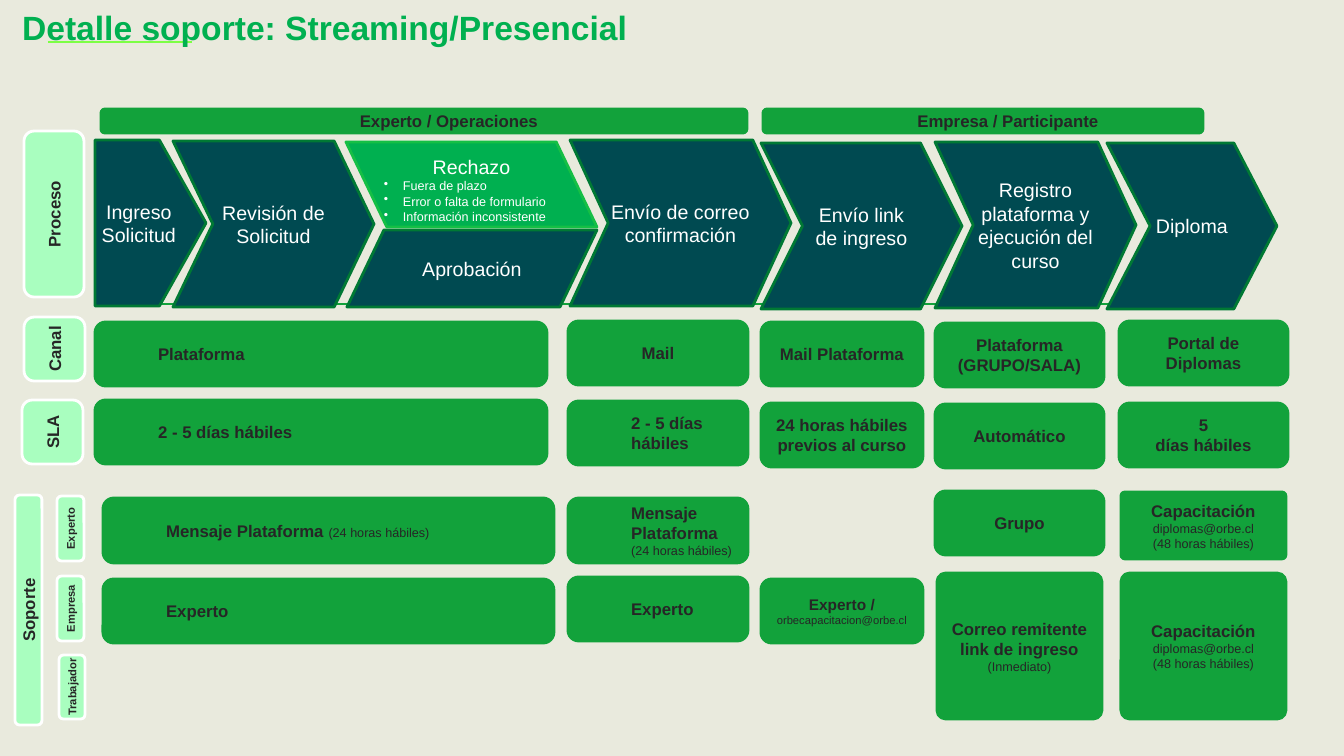
import pptx
import pptx.util
import pptx.dml.color
import pptx.enum.shapes
import pptx.enum.text
import pptx.oxml.ns
from lxml import etree
from dataclasses import dataclass, field

Shape = pptx.enum.shapes.MSO_SHAPE
Align = pptx.enum.text.PP_ALIGN
Anchor = pptx.enum.text.MSO_ANCHOR
qn = pptx.oxml.ns.qn

# ---- Theme: colours, and text styles as (size, bold, colour)
INK, WHITE = "262626", "FFFFFF"


@dataclass
class Theme:
    font: str = "Arial"
    background: str = "E9EADD"
    underline: str = "7CFF44"
    cell: tuple = ("12A23B", "12A23B")
    label: tuple = ("A9FEBF", WHITE)
    step: tuple = ("004A51", "007934")
    reject: tuple = ("00B050", "15BF45")
    text: dict = field(default_factory=lambda: {
        "title": (24, True, "00B050"), "step": (14, False, WHITE),
        "reason": (9, False, WHITE), "strong": (12, True, INK),
        "medium": (11, True, INK), "small": (8, True, INK),
        "note": (9, False, INK), "mail": (8, False, INK)})


theme = Theme()

# ---- Content: lengths in px; a paragraph is a list of (text, style) runs
TITLE = "Detalle soporte: Streaming/Presencial"
INDENT = 50
ROOMY, TIGHT, NARROW, BARE = (10, 5), (0, 5), (4, 5), (0, 0)

# column: left, width
COLUMNS = {
    "solicitud": (95, 452), "soporte": (103, 451), "correo": (568, 180),
    "link": (761, 162), "registro": (935, 169), "diploma": (1119, 169),
    "operaciones": (101, 646), "participante": (763, 440)}


def strong(*lines):
    return [[(line, "strong")] for line in lines]


HOURS = "(24 horas hábiles)"
CHAT = [[("Mensaje Plataforma ", "strong"), (HOURS, "note")]]
TRAINING = strong("Capacitación") + [
    [("diplomas@orbe.cl", "note")], [("(48 horas hábiles)", "note")]]
REMITTER = strong("Correo remitente link de ingreso") + [[("(Inmediato)", "note")]]
EXPERT_MAIL = [[("Experto / ", "medium"), ("orbecapacitacion@orbe.cl", "mail")]]

# column, top, height, paragraphs, alignment, indent
CELLS = [
    ("operaciones", 109, 24, strong("Experto / Operaciones"), "center", INDENT),
    ("participante", 109, 24, strong("Empresa / Participante"), "center", INDENT),
    ("solicitud", 322, 64, strong("Plataforma"), "left", INDENT),
    ("correo", 321, 64, strong("Mail"), "center", 0),
    ("link", 322, 64, strong("Mail Plataforma"), "center", 0),
    ("registro", 323, 64, strong("Plataforma", "(GRUPO/SALA)"), "center", 0),
    ("diploma", 321, 64, strong("Portal de Diplomas"), "center", 0),
    ("solicitud", 400, 64, strong("2 - 5 días hábiles"), "left", INDENT),
    ("correo", 401, 64, strong("2 - 5 días hábiles"), "left", INDENT),
    ("link", 403, 64, strong("24 horas hábiles previos al curso"), "center", 0),
    ("registro", 404, 64, strong("Automático"), "center", 0),
    ("diploma", 403, 64, strong("5", "días hábiles"), "center", 0),
    ("soporte", 498, 65, CHAT, "left", INDENT),
    ("correo", 498, 65, CHAT, "left", INDENT),
    ("registro", 491, 64, strong("Grupo"), "center", 0),
    ("soporte", 579, 64, strong("Experto"), "left", INDENT),
    ("correo", 577, 64, strong("Experto"), "left", INDENT),
    ("link", 579, 64, EXPERT_MAIL, "center", 0)]

# column, top, height, paragraphs: slightly narrower, with small corners
PANELS = [("registro", 573, 146, REMITTER),
          ("diploma", 492, 67, TRAINING),
          ("diploma", 573, 146, TRAINING)]

# text, style, left, top, width, height as seen, insets
LABELS = [
    ("Proceso", "strong", 24, 131, 60, 166, ROOMY),
    ("Canal", "strong", 24, 317, 61, 64, NARROW),
    ("SLA", "strong", 22, 400, 61, 64, NARROW),
    ("Soporte", "strong", 15, 495, 27, 230, ROOMY),
    ("Experto", "small", 57, 496, 27, 65, BARE),
    ("Empresa", "small", 57, 576, 27, 65, BARE),
    ("Trabajador", "small", 59, 655, 26, 64, BARE)]

# lines, shape, left, top, width, height, adjustment
STEPS = [
    (["Ingreso Solicitud"], Shape.PENTAGON, 95, 140, 111, 166, 0.42),
    (["Revisión de Solicitud"], Shape.CHEVRON, 173, 141, 201, 166, 0.24),
    (["Envío de correo confirmación"], Shape.CHEVRON, 570, 140, 221, 166, 0.23),
    (["Envío link", "de ingreso"], Shape.CHEVRON, 761, 143, 201, 166, 0.25),
    (["Registro plataforma y ejecución del curso"], Shape.CHEVRON, 935, 142, 201, 166, 0.23),
    (["Aprobación"], Shape.PARALLELOGRAM, 347, 230, 250, 77, 0.48),
    (["Diploma"], Shape.CHEVRON, 1107, 143, 170, 166, 0.26)]

REJECTION = (346, 142, 251, 85)
REASONS = ["Fuera de plazo", "Error o falta de formulario", "Información inconsistente"]


# ---- Helpers
def px(length):
    return round(length * 914400 / 100.8)


def rgb(code):
    return pptx.dml.color.RGBColor.from_string(code)


def add_span(para, text, style):
    span = para.add_run()
    span.text = text
    size, bold, colour = theme.text[style]
    span.font.name, span.font.size = theme.font, pptx.util.Pt(size)
    span.font.bold, span.font.color.rgb = bold, rgb(colour)


def add_box(page, kind, place, colours, paragraphs, insets=ROOMY,
            align="center", indent=0, adjust=None):
    box = page.shapes.add_shape(kind, *map(px, place))
    box.shadow.inherit = False
    box.fill.solid()
    box.fill.fore_color.rgb = rgb(colours[0])
    box.line.color.rgb = rgb(colours[1])
    box.line.width = pptx.util.Pt(2)
    if adjust is not None:
        box.adjustments[0] = adjust
    frame = box.text_frame
    frame.word_wrap, frame.vertical_anchor = True, Anchor.MIDDLE
    frame.margin_left = frame.margin_right = px(insets[0])
    frame.margin_top = frame.margin_bottom = px(insets[1])
    for number, spans in enumerate(paragraphs):
        para = frame.add_paragraph() if number else frame.paragraphs[0]
        para.alignment = Align.CENTER if align == "center" else Align.LEFT
        if indent:
            para.level = 1
            set_indent(para, indent, 0)
        for text, style in spans:
            add_span(para, text, style)
    return box


def set_indent(para, left, first):
    layout = para._p.get_or_add_pPr()
    layout.set("marL", str(px(left)))
    layout.set("indent", str(px(first)))
    return layout


def add_rule(page, left, right, top, colour, width):
    rule = page.shapes.add_connector(pptx.enum.shapes.MSO_CONNECTOR.STRAIGHT,
                                     px(left), px(top), px(right), px(top))
    rule.line.color.rgb, rule.line.width = rgb(colour), pptx.util.Pt(width)
    etree.SubElement(rule.element.spPr, qn("a:effectLst"))


def main():
    deck = pptx.Presentation()
    deck.slide_width, deck.slide_height = px(1344), px(756)
    page = deck.slides.add_slide(deck.slide_layouts[5])
    page.background.fill.solid()
    page.background.fill.fore_color.rgb = rgb(theme.background)

    # Title, in front of its underline
    add_rule(page, 48, 192, 42, theme.underline, 1.75)
    title = page.shapes.title
    title.left, title.top, title.width, title.height = map(px, (12, 10, 1159, 54))
    title.text_frame.vertical_anchor = Anchor.TOP
    title.text_frame.auto_size = pptx.enum.text.MSO_AUTO_SIZE.NONE
    heading = title.text_frame.paragraphs[0]
    heading.alignment, heading.line_spacing = Align.LEFT, 0.8
    add_span(heading, TITLE, "title")
    title.element.getparent().append(title.element)

    # Support grid
    for column, top, height, paragraphs, align, indent in CELLS:
        left, width = COLUMNS[column]
        add_box(page, Shape.ROUNDED_RECTANGLE, (left, top, width, height), theme.cell,
                paragraphs, align=align, indent=indent)
    for column, top, height, paragraphs in PANELS:
        left, width = COLUMNS[column]
        add_box(page, Shape.ROUNDED_RECTANGLE, (left + 2, top, width - 4, height),
                theme.cell, paragraphs, TIGHT, adjust=0.06)

    # Row labels, turned about their centres
    for text, style, left, top, width, height, insets in LABELS:
        shift = (height - width) / 2
        label = add_box(page, Shape.ROUNDED_RECTANGLE,
                        (left - shift, top + shift, height, width),
                        theme.label, [[(text, style)]], insets)
        label.rotation = 270

    # Process steps
    add_rule(page, 103, 1171, 304, theme.cell[1], 0.75)
    for lines, kind, *place, adjust in STEPS:
        add_box(page, kind, place, theme.step, [[(line, "step")] for line in lines],
                TIGHT, adjust=adjust)

    # Rejection branch with its reasons
    branch = add_box(page, Shape.PARALLELOGRAM, REJECTION, theme.reject,
                     [[("Rechazo", "step")]], BARE, adjust=0.48)
    branch.element.spPr.find(qn("a:xfrm")).set("flipH", "1")
    branch.text_frame.vertical_anchor = Anchor.TOP
    for reason in REASONS:
        para = branch.text_frame.add_paragraph()
        para.alignment = Align.LEFT
        etree.SubElement(set_indent(para, 19, -19), qn("a:buChar")).set("char", "•")
        add_span(para, reason, "reason")

    deck.save("out.pptx")


if __name__ == "__main__":
    main()
